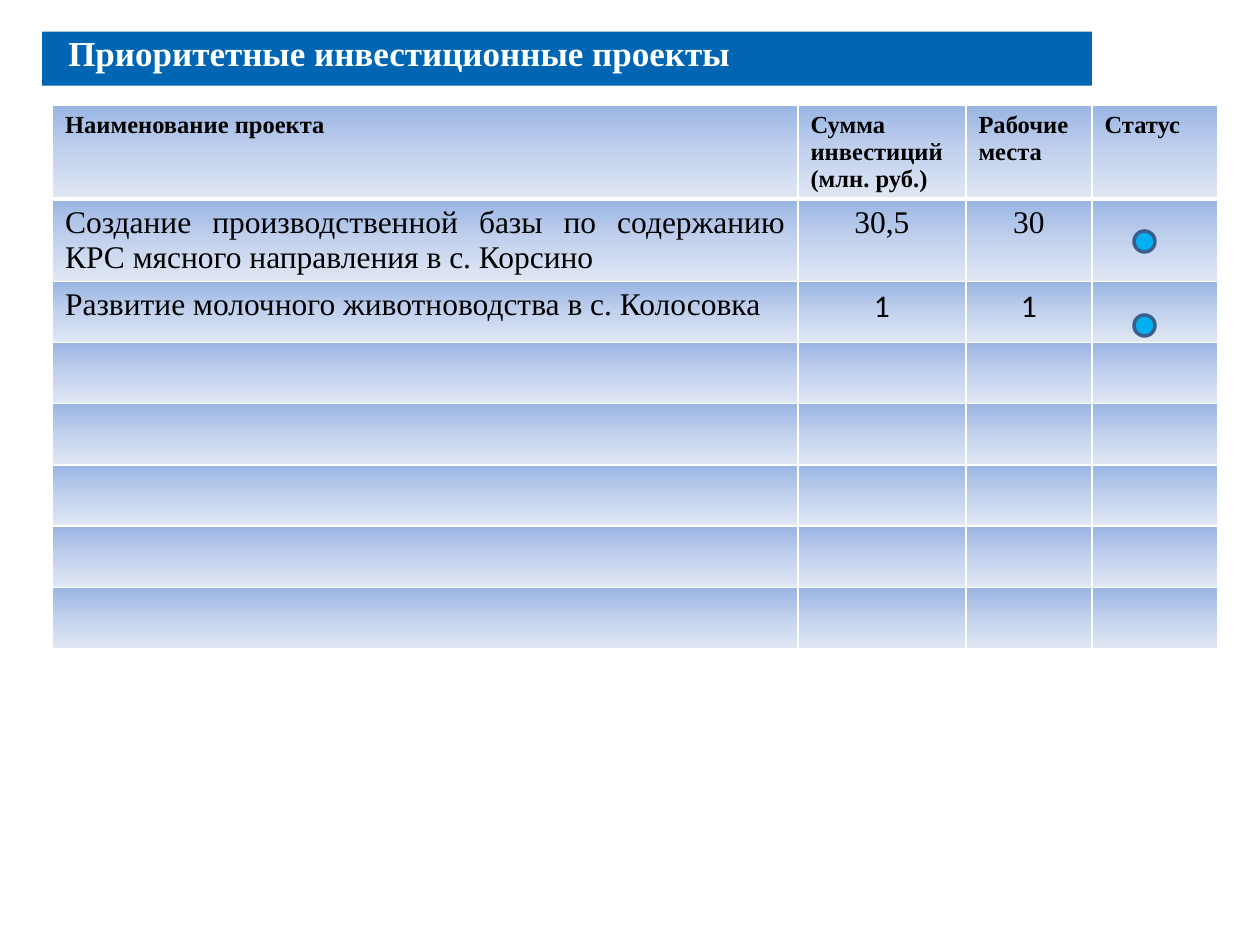
"""Builds a slide with a table of priority investment projects."""
import pptx
import pptx.dml.color
import pptx.enum.shapes
import pptx.enum.text
import pptx.oxml
import pptx.oxml.ns
import pptx.util

Pt = pptx.util.Pt
RGBColor = pptx.dml.color.RGBColor
ALIGN = pptx.enum.text.PP_ALIGN
WHITE = RGBColor(0xFF, 0xFF, 0xFF)
BLACK = RGBColor(0x00, 0x00, 0x00)
BANNER_BLUE = RGBColor(0x00, 0x66, 0xB3)
MARKER_BLUE = RGBColor(0x00, 0xB0, 0xF0)
MARKER_LINE = RGBColor(0x3A, 0x5F, 0x8C)
CELL_GRADIENT = {
    0: RGBColor(0x9A, 0xB5, 0xE4),
    50: RGBColor(0xC2, 0xD1, 0xED),
    100: RGBColor(0xE1, 0xE8, 0xF5),
}
SERIF = "Times New Roman"
SANS = "Calibri"

COLUMN_WIDTHS = [426, 96, 72, 72]
ROW_COUNT = 8
ROW_HEIGHT = 35
HEADERS = ["Наименование проекта", "Сумма инвестиций (млн. руб.)", "Рабочие места", "Статус"]
PROJECTS = [
    ("Создание производственной базы по содержанию КРС мясного направления в с. Корсино",
     "30,5", "30", ALIGN.JUSTIFY, SERIF),
    ("Развитие молочного животноводства в с. Колосовка", "1", "1", ALIGN.LEFT, SANS),
]


def write_text(frame, text, size=18, font=SERIF, color=BLACK, bold=False, align=ALIGN.LEFT):
    paragraph = frame.paragraphs[0]
    paragraph.alignment = align
    run = paragraph.add_run()
    run.text = text
    run.font.size = Pt(size)
    run.font.name = font
    run.font.bold = bold
    run.font.color.rgb = color


class SlideBuilder:
    def __init__(self, slide):
        self.slide = slide

    def title(self, text, left, top, width, height):
        shape = self.slide.shapes.title
        shape.left, shape.top, shape.width, shape.height = map(Pt, (left, top, width, height))
        shape.fill.solid()
        shape.fill.fore_color.rgb = BANNER_BLUE
        frame = shape.text_frame
        frame.auto_size = pptx.enum.text.MSO_AUTO_SIZE.NONE
        frame.vertical_anchor = pptx.enum.text.MSO_ANCHOR.TOP
        frame.margin_left = Pt(15)
        frame.margin_top = frame.margin_right = frame.margin_bottom = 0
        write_text(frame, text, size=20, color=WHITE, bold=True)

    def style_cell(self, cell, top_line, bottom_line):
        namespace = pptx.oxml.ns.nsdecls("a")
        properties = cell._tc.get_or_add_tcPr()
        for side, width in (("L", 1), ("R", 1), ("T", top_line), ("B", bottom_line)):
            properties.append(pptx.oxml.parse_xml(
                f'<a:ln{side} {namespace} w="{Pt(width)}"><a:solidFill>'
                f'<a:srgbClr val="{WHITE}"/></a:solidFill></a:ln{side}>'))
        stops = "".join(f'<a:gs pos="{position * 1000}"><a:srgbClr val="{color}"/></a:gs>'
                        for position, color in CELL_GRADIENT.items())
        properties.append(pptx.oxml.parse_xml(
            f'<a:gradFill {namespace}><a:gsLst>{stops}</a:gsLst>'
            '<a:lin ang="5400000" scaled="0"/></a:gradFill>'))

    def project_table(self, left, top):
        table = self.slide.shapes.add_table(
            ROW_COUNT, len(COLUMN_WIDTHS), Pt(left), Pt(top),
            Pt(sum(COLUMN_WIDTHS)), Pt(ROW_COUNT * ROW_HEIGHT)).table
        table.horz_banding = False
        for column, width in zip(table.columns, COLUMN_WIDTHS):
            column.width = Pt(width)
        for index, row in enumerate(table.rows):
            row.height = Pt(ROW_HEIGHT)
            for cell in row.cells:
                self.style_cell(cell, 3 if index == 1 else 1, 3 if index == 0 else 1)
        for column, header in enumerate(HEADERS):
            write_text(table.cell(0, column).text_frame, header, size=14, bold=True)
        for row, (name, amount, jobs, align, number_font) in enumerate(PROJECTS, 1):
            write_text(table.cell(row, 0).text_frame, name, align=align)
            for column, value in enumerate((amount, jobs), 1):
                write_text(table.cell(row, column).text_frame, value,
                           font=number_font, align=ALIGN.CENTER)

    def status_marker(self, left, top, diameter=12):
        shape = self.slide.shapes.add_shape(
            pptx.enum.shapes.MSO_SHAPE.OVAL, Pt(left), Pt(top), Pt(diameter), Pt(diameter))
        shape.shadow.inherit = False
        shape.fill.solid()
        shape.fill.fore_color.rgb = MARKER_BLUE
        shape.line.color.rgb = MARKER_LINE
        shape.line.width = Pt(2)


def main():
    presentation = pptx.Presentation()
    presentation.slide_width, presentation.slide_height = Pt(720), Pt(540)
    builder = SlideBuilder(presentation.slides.add_slide(presentation.slide_layouts[5]))
    builder.title("Приоритетные инвестиционные проекты", 24, 18, 600, 31)
    builder.project_table(30, 60)
    for top in (132, 180):
        builder.status_marker(648, top)
    presentation.save("out.pptx")


if __name__ == "__main__":
    main()
